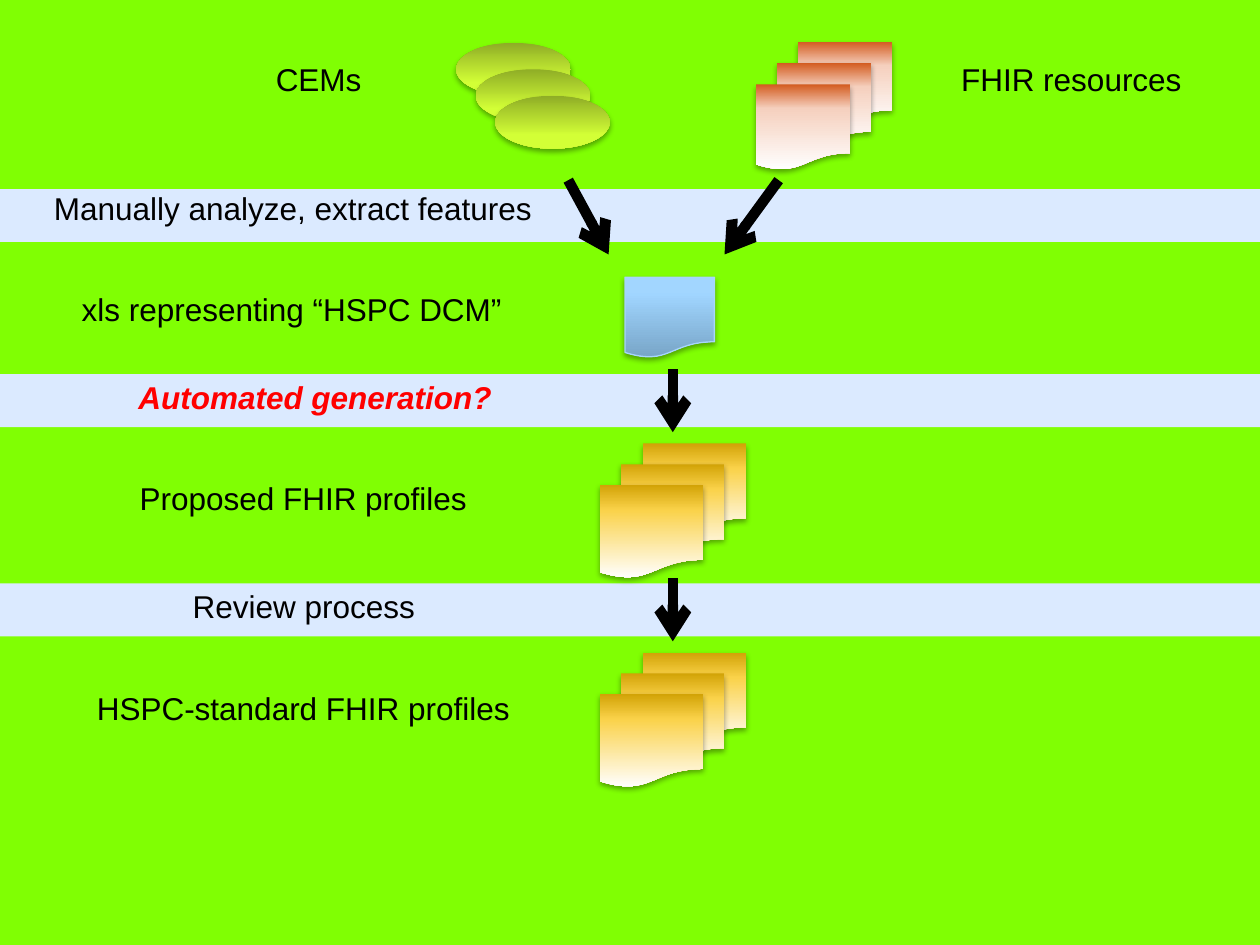
from lxml import etree
from pptx import Presentation
from pptx import util as u
from pptx.dml.color import RGBColor
from pptx.enum import shapes, text
from pptx.oxml import parse_xml
from pptx.oxml.ns import qn, nsdecls

# Grid of 100 columns by 75 rows
CELL = u.Inches(0.1)
DOC = shapes.MSO_SHAPE.FLOWCHART_DOCUMENT
OVAL = shapes.MSO_SHAPE.OVAL

# Gradient stops, from top to bottom
GOLD = [(0, "D2A306"), (27, "FAD24A"), (100, "FFFFFF")]
RUST = [(0, "D35B1F"), (28, "F5D0BE"), (100, "FFFFFF")]
LIME = [(0, "8FAD26"), (75, "D3FF36")]
SKY = [(0, "A2D6FF"), (20, "A0D5FF"), (100, "78A5C7")]


def grid(*cells):
    return [round(c * CELL) for c in cells]


def color(code):
    return RGBColor.from_string(code)


def shade(item, stops):
    """Vertical gradient and a soft shadow below."""
    item.fill.gradient()
    item.fill.gradient_angle = 270
    stop_list = item._element.spPr.find(".//" + qn("a:gsLst"))
    for old in list(stop_list):
        stop_list.remove(old)
    for pos, code in stops:
        stop = etree.SubElement(stop_list, qn("a:gs"), pos=str(pos * 1000))
        etree.SubElement(stop, qn("a:srgbClr"), val=code)
    item.shadow.inherit = False
    item._element.spPr.find(qn("a:effectLst")).append(parse_xml(
        f'<a:outerShdw {nsdecls("a")} blurRad="{u.Pt(3.1)}" dist="{u.Pt(1.8)}" '
        'dir="5400000" rotWithShape="0"><a:srgbClr val="000000">'
        '<a:alpha val="35000"/></a:srgbClr></a:outerShdw>'))


def band(slide, top):
    bar = slide.shapes.add_shape(shapes.MSO_SHAPE.RECTANGLE, *grid(0, top, 100, 4.2))
    bar.shadow.inherit = False
    bar.fill.solid()
    bar.fill.fore_color.rgb = color("DBEAFF")
    bar.line.fill.background()


def stack(slide, box, kind, stops, step=(0, 0), count=1, edge=None):
    """Overlapping shapes; box holds the rearmost one."""
    left, top, wide, high = box
    for i in range(count):
        item = slide.shapes.add_shape(
            kind, *grid(left + i * step[0], top + i * step[1], wide, high))
        shade(item, stops)
        if edge:
            item.line.color.rgb = color(edge)
            item.line.width = u.Pt(0.75)
        else:
            item.line.fill.background()


def arrow(slide, start, end):
    line = slide.shapes.add_connector(
        shapes.MSO_CONNECTOR.STRAIGHT, *grid(*start, *end))
    line.line.color.rgb = color("000000")
    line.line.width = u.Pt(6)
    etree.SubElement(line.line._get_or_add_ln(), qn("a:tailEnd"), type="arrow")
    etree.SubElement(line._element.spPr, qn("a:effectLst"))


def label(slide, box, words, code="000000", strong=False):
    frame = slide.shapes.add_textbox(*grid(*box, 4)).text_frame
    frame.word_wrap = False
    frame.auto_size = text.MSO_AUTO_SIZE.SHAPE_TO_FIT_TEXT
    frame.text = words
    font = frame.paragraphs[0].runs[0].font
    font.name, font.size = "Arial", u.Pt(18)
    font.color.rgb = color(code)
    if strong:
        font.bold = font.italic = True


def main():
    deck = Presentation()
    deck.slide_width, deck.slide_height = grid(100, 75)
    slide = deck.slides.add_slide(deck.slide_layouts[6])
    slide.background.fill.solid()
    slide.background.fill.fore_color.rgb = color("80FF03")

    # Process bands
    for top in (15, 29.7, 46.3):
        band(slide, top)

    # Sources, spreadsheet and profiles
    stack(slide, (36.2, 3.4, 9.1, 4.2), OVAL, LIME, (1.55, 2.1), 3)
    stack(slide, (63.3, 3.3, 7.5, 6.8), DOC, RUST, (-1.65, 1.7), 3)
    stack(slide, (49.6, 22, 7.1, 6.4), DOC, SKY, edge="A7D6FB")
    for top in (35.2, 51.8):
        stack(slide, (51, top, 8.2, 7.4), DOC, GOLD, (-1.7, 1.65), 3)

    # Flow arrows
    arrow(slide, (45.1, 14.3), (48.3, 20.2))
    arrow(slide, (61.8, 14.3), (57.5, 20.2))
    for top in (29.3, 45.9):
        arrow(slide, (53.4, top), (53.4, top + 5))

    # Captions
    label(slide, (20.9, 4.3, 8.9), "CEMs")
    label(slide, (75.3, 4.3, 19.7), "FHIR resources")
    label(slide, (3.3, 14.5, 40), "Manually analyze, extract features")
    label(slide, (5.5, 22.5, 35.7), "xls representing “HSPC DCM”")
    label(slide, (10, 29.5, 30.9), "Automated generation?", "FF0000", True)
    label(slide, (10.1, 37.5, 28.3), "Proposed FHIR profiles")
    label(slide, (14.3, 46.1, 19.8), "Review process")
    label(slide, (6.7, 54.2, 35.1), "HSPC-standard FHIR profiles")

    deck.save("out.pptx")


if __name__ == "__main__":
    main()
